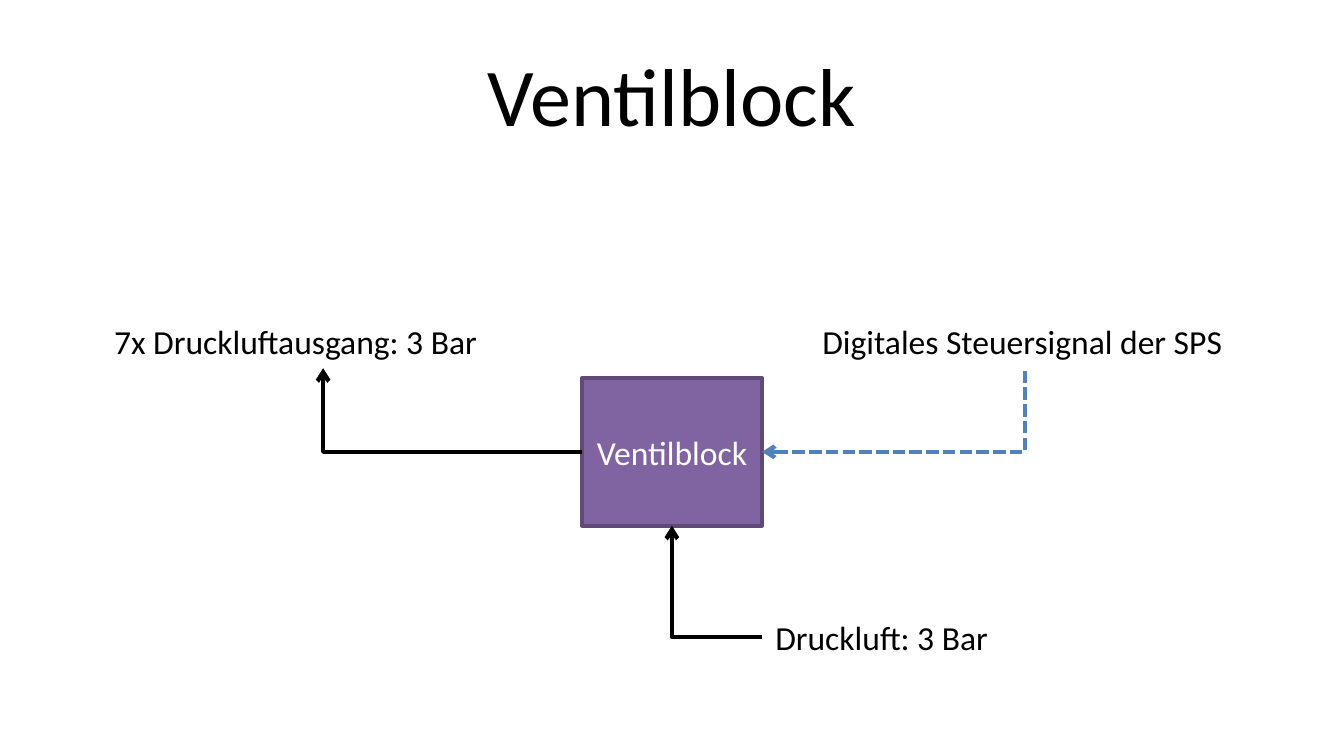
"""Build a slide showing the inputs and outputs of a valve block."""
from dataclasses import dataclass

from lxml import etree
from pptx import Presentation
from pptx.dml.color import RGBColor
from pptx.enum.dml import MSO_LINE
from pptx.enum.shapes import MSO_CONNECTOR, MSO_SHAPE
from pptx.enum.text import MSO_ANCHOR, PP_ALIGN
from pptx.oxml.ns import qn
from pptx.util import Inches, Length, Pt

ELBOW = MSO_CONNECTOR.ELBOW
RECTANGLE = MSO_SHAPE.RECTANGLE
DASHED = MSO_LINE.SQUARE_DOT
LEFT, CENTER = PP_ALIGN.LEFT, PP_ALIGN.CENTER
TOP, MIDDLE = MSO_ANCHOR.TOP, MSO_ANCHOR.MIDDLE
BLANK_LAYOUT = 6
COLUMNS, ROWS = 100, 56.25


@dataclass(frozen=True)
class Theme:
    font: str = "Calibri"
    title_size: float = 44
    body_size: float = 18
    text: RGBColor = RGBColor(0, 0, 0)
    on_block: RGBColor = RGBColor(255, 255, 255)
    block_fill: RGBColor = RGBColor(0x80, 0x64, 0xA2)
    block_line: RGBColor = RGBColor(0x5F, 0x4A, 0x78)
    signal: RGBColor = RGBColor(0x4F, 0x81, 0xBD)
    block_line_width: float = 2
    flow_width: float = 2.25


THEME = Theme()


@dataclass(frozen=True)
class Area:
    column: float
    row: float
    columns: float
    rows: float

    @property
    def right(self) -> float:
        return self.column + self.columns

    @property
    def bottom(self) -> float:
        return self.row + self.rows

    @property
    def center(self) -> float:
        return self.column + self.columns / 2

    @property
    def middle(self) -> float:
        return self.row + self.rows / 2


@dataclass(frozen=True)
class Label:
    text: str
    area: Area
    size: float = THEME.body_size
    align: PP_ALIGN = LEFT
    anchor: MSO_ANCHOR = TOP
    wrap: bool = True


@dataclass(frozen=True)
class Flow:
    start: tuple[float, float]
    end: tuple[float, float]
    color: RGBColor = THEME.text
    arrow_end: str = "tailEnd"
    dashed: bool = False


BLOCK = Area(43.3, ROWS / 2, 13.4, 11)
OUTLET = Area(7.5, 23.4, 33.1, 4)
SIGNAL = Area(60.2, 23.4, 32.1, 4)
INLET = Area(BLOCK.right, 45.4, 33.1, 4)

LABELS = [
    Label("Ventilblock", Area(5, 2.3, 90, 9.4), THEME.title_size, CENTER, MIDDLE),
    Label("7x Druckluftausgang: 3 Bar", OUTLET),
    Label("Digitales Steuersignal der SPS", SIGNAL, wrap=False),
    Label("Druckluft: 3 Bar", INLET),
]
FLOWS = [
    Flow((BLOCK.column, BLOCK.middle), (OUTLET.center, OUTLET.bottom)),
    Flow((BLOCK.right, BLOCK.middle), (SIGNAL.center, SIGNAL.bottom),
         THEME.signal, "headEnd", dashed=True),
    Flow((INLET.column, INLET.middle), (BLOCK.center, BLOCK.bottom)),
]


def grid(cells: float) -> Length:
    """Turn a count of grid cells into a length."""
    return Inches(cells * 10 / COLUMNS)


def place(area: Area) -> tuple[Length, ...]:
    """Return left, top, width and height of an area."""
    return tuple(map(grid, (area.column, area.row, area.columns, area.rows)))


def write(shape, label: Label, color: RGBColor) -> None:
    """Set the text of a shape and its style."""
    frame = shape.text_frame
    frame.word_wrap = label.wrap
    frame.vertical_anchor = label.anchor
    para = frame.paragraphs[0]
    para.text = label.text
    para.alignment = label.align
    para.font.name = THEME.font
    para.font.size = Pt(label.size)
    para.font.color.rgb = color


def draw_label(page, label: Label) -> None:
    """Add a plain text box."""
    write(page.shapes.add_textbox(*place(label.area)), label, THEME.text)


def draw_block(page, label: Label) -> None:
    """Add the filled valve block."""
    box = page.shapes.add_shape(RECTANGLE, *place(label.area))
    box.shadow.inherit = False
    box.fill.solid()
    box.fill.fore_color.rgb = THEME.block_fill
    box.line.color.rgb = THEME.block_line
    box.line.width = Pt(THEME.block_line_width)
    write(box, label, THEME.on_block)


def draw_flow(page, flow: Flow) -> None:
    """Add an arrow that runs across first and then up."""
    arrow = page.shapes.add_connector(ELBOW, *map(grid, flow.start + flow.end))
    arrow.line.color.rgb = flow.color
    arrow.line.width = Pt(THEME.flow_width)
    if flow.dashed:
        arrow.line.dash_style = DASHED
    properties = arrow.element.spPr
    properties.find(qn("a:prstGeom")).set("prst", "bentConnector2")
    outline = properties.find(qn("a:ln"))
    etree.SubElement(outline, qn(f"a:{flow.arrow_end}"), type="arrow")
    etree.SubElement(properties, qn("a:effectLst"))


def main() -> None:
    """Build and save the deck."""
    deck = Presentation()
    deck.slide_width, deck.slide_height = grid(COLUMNS), grid(ROWS)
    page = deck.slides.add_slide(deck.slide_layouts[BLANK_LAYOUT])
    draw_block(page, Label("Ventilblock", BLOCK, align=CENTER, anchor=MIDDLE))
    for label in LABELS:
        draw_label(page, label)
    for flow in FLOWS:
        draw_flow(page, flow)
    deck.save("out.pptx")


if __name__ == "__main__":
    main()
